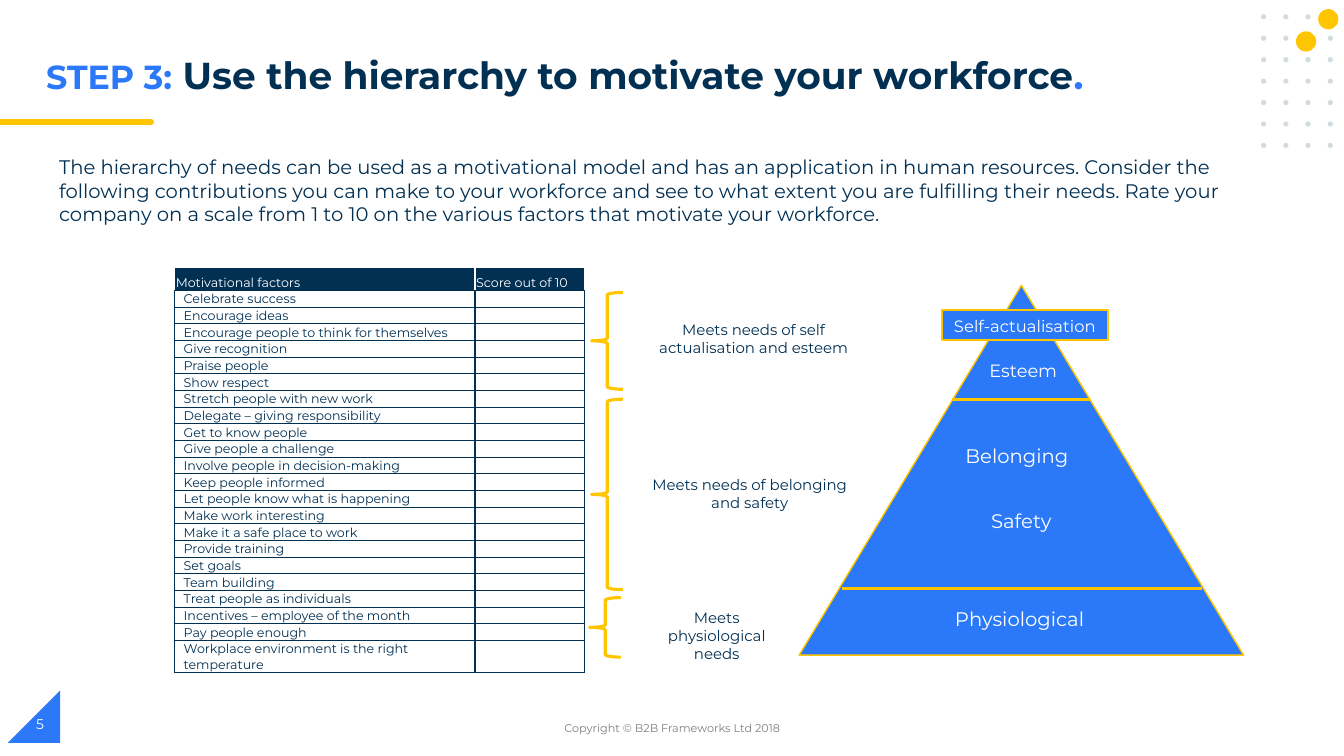
from dataclasses import dataclass

import pptx
import pptx.dml.color
import pptx.enum.shapes
import pptx.enum.text
import pptx.oxml.ns
import pptx.util
from lxml import etree
from pptx.dml.color import RGBColor
from pptx.enum.shapes import MSO_SHAPE
from pptx.enum.text import MSO_ANCHOR, PP_ALIGN
from pptx.oxml.ns import qn
from pptx.util import Cm

FONT = "Montserrat"
BLUE = RGBColor(0x2B, 0x79, 0xF8)
YELLOW = RGBColor(0xFF, 0xC6, 0x00)
NAVY = RGBColor(0x02, 0x30, 0x53)
WHITE = RGBColor(0xFF, 0xFF, 0xFF)
DOT_GREY = RGBColor(0xD1, 0xDB, 0xE0)
FOOTER_GREY = RGBColor(0x7F, 0x7F, 0x7F)


@dataclass(frozen=True)
class Box:
    """A position and size in centimetres."""
    left: float
    top: float
    width: float
    height: float

    def lengths(self) -> tuple:
        return Cm(self.left), Cm(self.top), Cm(self.width), Cm(self.height)


@dataclass(frozen=True)
class Label:
    text: str
    box: Box
    size: float
    color: RGBColor
    align: PP_ALIGN = PP_ALIGN.CENTER
    anchor: MSO_ANCHOR = MSO_ANCHOR.TOP


INTRO = Label(
    "The hierarchy of needs can be used as a motivational model and has an application in "
    "human resources. Consider the following contributions you can make to your workforce and "
    "see to what extent you are fulfilling their needs. Rate your company on a scale from 1 to "
    "10 on the various factors that motivate your workforce.",
    Box(1.24, 3.78, 31.45, 2.06), 14, NAVY, PP_ALIGN.LEFT)

TITLE_PARTS = [
    ("STEP 3:", 23.8, BLUE),
    (" Use the hierarchy to motivate your workforce", 26.8, NAVY),
    (".", 26.8, BLUE),
]

FACTORS = [
    "Celebrate success", "Encourage ideas", "Encourage people to think for themselves",
    "Give recognition", "Praise people", "Show respect", "Stretch people with new work",
    "Delegate – giving responsibility", "Get to know people", "Give people a challenge",
    "Involve people in decision-making", "Keep people informed",
    "Let people know what is happening", "Make work interesting",
    "Make it a safe place to work", "Provide training", "Set goals", "Team building",
    "Treat people as individuals", "Incentives – employee of the month",
    "Pay people enough", "Workplace environment is the right temperature",
]

BRACES = [
    Box(14.91, 7.37, 0.79, 2.44),
    Box(14.91, 10.06, 0.79, 4.8),
    Box(14.86, 15.06, 0.79, 1.5),
]

LABELS = [
    Label("Meets needs of self actualisation and esteem", Box(16.1, 7.95, 5.79, 1.17), 10.7, NAVY),
    Label("Meets needs of belonging and safety", Box(16, 11.86, 5.79, 1.17), 10.7, NAVY),
    Label("Meets physiological needs", Box(15.98, 15.21, 4.17, 1.63), 10.7, NAVY),
    Label("Esteem", Box(24.56, 8.94, 2.46, 0.79), 12.7, WHITE),
    Label("Belonging", Box(23.93, 11.07, 3.4, 0.86), 14, WHITE),
    Label("Safety", Box(24.38, 12.7, 2.72, 0.86), 14, WHITE),
    Label("Physiological", Box(23.55, 15.16, 4.29, 0.86), 14, WHITE),
    Label("Copyright © B2B Frameworks Ltd 2018", Box(11.23, 17.83, 11.43, 1.02), 8,
          FOOTER_GREY, anchor=MSO_ANCHOR.MIDDLE),
    Label("5", Box(0.66, 17.73, 7.62, 1.02), 10, WHITE, PP_ALIGN.LEFT, MSO_ANCHOR.MIDDLE),
]
PEAK_LABEL = Label("Self-actualisation", Box(23.52, 7.85, 4.62, 0.76), 11.7, WHITE)


def style_run(run, size: float, color: RGBColor, bold: bool = False) -> None:
    run.font.name = FONT
    run.font.size = pptx.util.Pt(size)
    run.font.color.rgb = color
    run.font.bold = bold


def draw_shape(slide, kind: MSO_SHAPE, box: Box, fill: RGBColor | None = None,
               line: RGBColor | None = None, weight: float = 1):
    shape = slide.shapes.add_shape(kind, *box.lengths())
    shape.shadow.inherit = False
    if fill is None:
        shape.fill.background()
    else:
        shape.fill.solid()
        shape.fill.fore_color.rgb = fill
    if line is None:
        shape.line.fill.background()
    else:
        shape.line.color.rgb = line
        shape.line.width = pptx.util.Pt(weight)
    return shape


def draw_label(slide, label: Label) -> None:
    frame = slide.shapes.add_textbox(*label.box.lengths()).text_frame
    frame.word_wrap = True
    frame.vertical_anchor = label.anchor
    frame.text = label.text
    frame.paragraphs[0].alignment = label.align
    style_run(frame.paragraphs[0].runs[0], label.size, label.color)


def draw_divider(slide, left: float, right: float, y: float) -> None:
    divider = slide.shapes.add_connector(
        pptx.enum.shapes.MSO_CONNECTOR.STRAIGHT, Cm(left), Cm(y), Cm(right), Cm(y))
    divider.line.color.rgb = YELLOW
    divider.line.width = pptx.util.Pt(2.25)
    etree.SubElement(divider._element.spPr, qn("a:effectLst"))


def fill_cell(cell, text: str, header: bool) -> None:
    cell.margin_left = cell.margin_right = cell.margin_top = Cm(0.03)
    cell.margin_bottom = 0
    cell.vertical_anchor = MSO_ANCHOR.BOTTOM if header else MSO_ANCHOR.MIDDLE
    paragraph = cell.text_frame.paragraphs[0]
    if text:
        paragraph.text = text
        style_run(paragraph.runs[0], 9, WHITE if header else NAVY)
        if not header:
            paragraph._p.get_or_add_pPr().set("marL", str(Cm(0.2)))
    else:
        etree.SubElement(paragraph._p, qn("a:endParaRPr"), sz="900")
    # Borders come before the fill in the cell properties
    properties = cell._tc.get_or_add_tcPr()
    for side in ("a:lnL", "a:lnR", "a:lnT", "a:lnB"):
        border = etree.SubElement(properties, qn(side), w="12700")
        solid = etree.SubElement(border, qn("a:solidFill"))
        etree.SubElement(solid, qn("a:srgbClr"), val=str(WHITE if header else NAVY))
    if header:
        cell.fill.solid()
        cell.fill.fore_color.rgb = NAVY
    else:
        cell.fill.background()


def draw_score_table(slide) -> None:
    rows = [("Motivational factors", "Score out of 10")] + [(factor, "") for factor in FACTORS]
    heights = [0.57] + [0.42] * (len(FACTORS) - 1) + [0.8]
    box = Box(4.4, 6.75, 10.34, sum(heights))
    table = slide.shapes.add_table(len(rows), 2, *box.lengths()).table
    table.horz_banding = False
    for column, width in zip(table.columns, (7.57, 2.77)):
        column.width = Cm(width)
    for index, (texts, height) in enumerate(zip(rows, heights)):
        table.rows[index].height = Cm(height)
        for column, text in enumerate(texts):
            fill_cell(table.cell(index, column), text, header=index == 0)


def draw_decoration(slide) -> None:
    corner = draw_shape(slide, MSO_SHAPE.RIGHT_TRIANGLE, Box(0.2, 17.4, 1.32, 1.32), BLUE)
    corner._element.spPr.xfrm.set("flipH", "1")
    draw_shape(slide, MSO_SHAPE.FLOWCHART_TERMINATOR, Box(3.4, 3, 0.48, 0.15), YELLOW)
    draw_shape(slide, MSO_SHAPE.RECTANGLE, Box(0, 3, 3.58, 0.15), YELLOW)
    for row in range(7):
        for column in range(4):
            dot = Box(31.78 + column * 0.56, 0.36 + row * 0.54, 0.13, 0.13)
            draw_shape(slide, MSO_SHAPE.OVAL, dot, DOT_GREY)
    for left, top in ((33.22, 0.23), (32.66, 0.79)):
        draw_shape(slide, MSO_SHAPE.OVAL, Box(left, top, 0.51, 0.51), YELLOW)


def draw_title(slide) -> None:
    title = slide.shapes.title
    title.left, title.top, title.width, title.height = Box(0.91, 1.32, 28.55, 1.52).lengths()
    title.text_frame.vertical_anchor = MSO_ANCHOR.TOP
    title.text_frame.auto_size = pptx.enum.text.MSO_AUTO_SIZE.NONE
    heading = title.text_frame.paragraphs[0]
    heading.alignment = PP_ALIGN.LEFT
    heading.line_spacing = 0.9
    for text, size, color in TITLE_PARTS:
        run = heading.add_run()
        run.text = text
        style_run(run, size, color, bold=True)


def main() -> None:
    presentation = pptx.Presentation()
    presentation.slide_width, presentation.slide_height = Cm(33.87), Cm(19.05)
    slide = presentation.slides.add_slide(presentation.slide_layouts[5])

    draw_decoration(slide)
    draw_title(slide)
    draw_label(slide, INTRO)
    draw_score_table(slide)

    # Braces linking the factors to the needs
    for box in BRACES:
        brace = draw_shape(slide, MSO_SHAPE.LEFT_BRACE, box, line=YELLOW, weight=2.25)
        brace.adjustments[0] = 0.083

    # Pyramid of needs
    draw_shape(slide, MSO_SHAPE.ISOSCELES_TRIANGLE, Box(20.14, 7.19, 11.2, 9.32), BLUE, YELLOW)
    draw_divider(slide, 23.98, 27.46, 10.06)
    draw_divider(slide, 21.21, 30.28, 14.83)
    for label in LABELS:
        draw_label(slide, label)
    draw_shape(slide, MSO_SHAPE.RECTANGLE, Box(23.75, 7.82, 4.17, 0.76), BLUE, YELLOW, 1.5)
    draw_label(slide, PEAK_LABEL)

    presentation.save("out.pptx")


if __name__ == "__main__":
    main()
